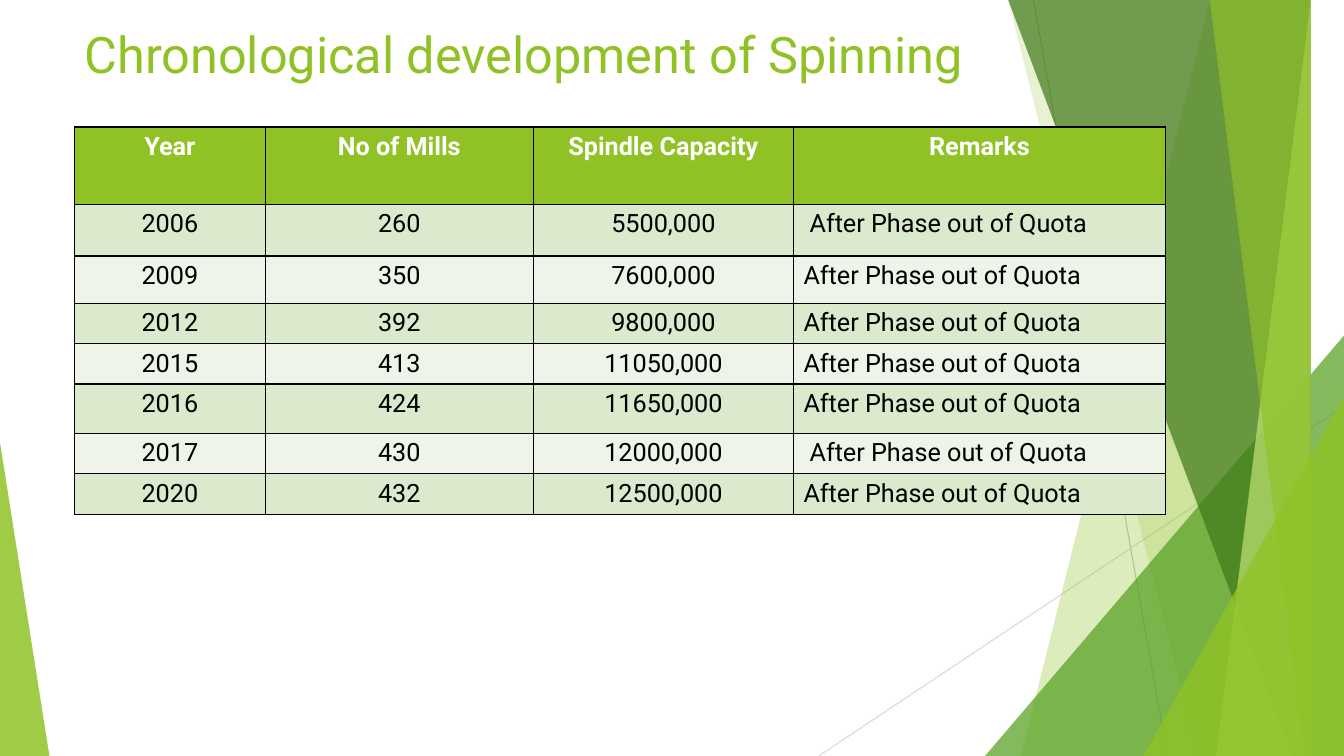
from dataclasses import dataclass

import pptx
import pptx.dml.color
import pptx.enum.shapes
import pptx.enum.text
import pptx.oxml
import pptx.oxml.ns
import pptx.util

Inches = pptx.util.Inches
Pt = pptx.util.Pt
ALIGN = pptx.enum.text.PP_ALIGN
WIDTH, HEIGHT = 13.33, 7.5
TOP = -0.01
FONT = "Roboto"
COLOURS = {
    "lime": "90C226", "green": "54A021", "forest": "3F7819", "pale": "C0E474",
    "grey": "BFBFBF", "silver": "D9D9D9", "white": "FFFFFF", "black": "000000",
    "odd": "DBE9CD", "even": "EEF4E8",
}


@dataclass
class Ray:
    start: tuple[float, float]
    end: tuple[float, float]
    colour: str


@dataclass
class Band:
    """A panel running from the slide's top to its bottom along the right edge."""
    top_left: float
    bottom_left: float
    colour: str
    opacity: int


@dataclass
class Wedge:
    """A triangle standing on the bottom edge, its apex at the given side."""
    left: float
    top: float
    width: float
    apex: float
    colour: str
    opacity: int


@dataclass
class Record:
    year: str
    mills: str
    capacity: str
    height: float
    indent: float = 0.1


RAYS = [
    Ray((10.25, 0), (11.58, HEIGHT), "grey"),
    Ray((WIDTH, 4.03), (8.12, HEIGHT), "silver"),
]
PANELS = [
    Band(12.28, 10.04, "lime", 30),
    Band(10.5, 11.83, "lime", 20),
    Wedge(9.77, 3.33, 3.56, 1, "green", 72),
    Band(10.21, 12.91, "forest", 70),
    Band(13.03, 11.92, "pale", 70),
    Band(11.96, 13.18, "lime", 65),
    Wedge(11.34, 3.93, 1.99, 1, "lime", 80),
    Wedge(0, 4.39, 0.49, 0, "lime", 85),
]
HEADINGS = ["Year", "No of Mills", "Spindle Capacity", "Remarks"]
COLUMN_WIDTHS = [1.89, 2.66, 2.58, 3.69]
HEADING_HEIGHT = 0.77
REMARK = "After Phase out of Quota"
RECORDS = [
    Record("2006", "260", "5500,000", 0.51, indent=0.16),
    Record("2009", "350", "7600,000", 0.47),
    Record("2012", "392", "9800,000", 0.4),
    Record("2015", "413", "11050,000", 0.4),
    Record("2016", "424", "11650,000", 0.49),
    Record("2017", "430", "12000,000", 0.39, indent=0.16),
    Record("2020", "432", "12500,000", 0.39),
]


def rgb(name: str) -> pptx.dml.color.RGBColor:
    return pptx.dml.color.RGBColor.from_string(COLOURS[name])


def write(para, text: str, colour: str, **formats) -> None:
    span = para.add_run()
    span.text = text
    for name, value in {"name": FONT, **formats}.items():
        setattr(span.font, name, value)
    span.font.color.rgb = rgb(colour)


def draw_ray(page, ray: Ray) -> None:
    ends = [Inches(value) for value in (*ray.start, *ray.end)]
    line = page.shapes.add_connector(pptx.enum.shapes.MSO_CONNECTOR.STRAIGHT, *ends)
    line.line.color.rgb = rgb(ray.colour)
    line.line.width = Pt(0.75)
    line.element.spPr.append(pptx.oxml.parse_xml(
        f'<a:effectLst {pptx.oxml.ns.nsdecls("a")}/>'))


def draw_panel(page, panel: Band | Wedge) -> None:
    if isinstance(panel, Band):
        builder = page.shapes.build_freeform(panel.top_left, TOP, scale=Inches(1))
        builder.add_line_segments(
            [(WIDTH, TOP), (WIDTH, HEIGHT), (panel.bottom_left, HEIGHT)])
        shape = builder.convert_to_shape()
    else:
        shape = page.shapes.add_shape(
            pptx.enum.shapes.MSO_SHAPE.ISOSCELES_TRIANGLE,
            Inches(panel.left), Inches(panel.top),
            Inches(panel.width), Inches(HEIGHT - panel.top))
        shape.adjustments[0] = panel.apex
    shape.shadow.inherit = False
    shape.line.fill.background()
    shape.fill.solid()
    shape.fill.fore_color.rgb = rgb(panel.colour)
    tint = shape.element.spPr.find(".//" + pptx.oxml.ns.qn("a:srgbClr"))
    tint.append(pptx.oxml.parse_xml(
        f'<a:alpha {pptx.oxml.ns.nsdecls("a")} val="{panel.opacity * 1000}"/>'))


def draw_title(page, text: str) -> None:
    box = page.shapes.add_textbox(Inches(0.74), Inches(0.14), Inches(9.4), Inches(0.86))
    box.text_frame.word_wrap = True
    box.text_frame.margin_top = Inches(0.09)
    write(box.text_frame.paragraphs[0], text, "lime", size=Pt(36))


def add_borders(cell) -> None:
    properties = cell._tc.get_or_add_tcPr()
    for position, side in enumerate(("lnL", "lnR", "lnT", "lnB")):
        properties.insert(position, pptx.oxml.parse_xml(
            f'<a:{side} {pptx.oxml.ns.nsdecls("a")} w="{Pt(1)}"><a:solidFill>'
            f'<a:srgbClr val="{COLOURS["black"]}"/></a:solidFill></a:{side}>'))


def fill_cell(cell, text: str, fill: str, colour: str, bold: bool, align) -> None:
    cell.fill.solid()
    cell.fill.fore_color.rgb = rgb(fill)
    para = cell.text_frame.paragraphs[0]
    para.alignment = align
    write(para, text, colour, size=Pt(18), bold=bold)
    add_borders(cell)


def draw_table(page) -> None:
    heights = [HEADING_HEIGHT] + [record.height for record in RECORDS]
    table = page.shapes.add_table(
        len(heights), len(HEADINGS), Inches(0.74), Inches(1.26),
        Inches(sum(COLUMN_WIDTHS)), Inches(sum(heights))).table
    table.horz_banding = False
    for column, width in zip(table.columns, COLUMN_WIDTHS):
        column.width = Inches(width)
    for row, height in zip(table.rows, heights):
        row.height = Inches(height)
    for column, heading in enumerate(HEADINGS):
        fill_cell(table.cell(0, column), heading, "lime", "white", True, ALIGN.CENTER)
    for row, record in enumerate(RECORDS, start=1):
        fill = "odd" if row % 2 else "even"
        for column, text in enumerate((record.year, record.mills, record.capacity)):
            fill_cell(table.cell(row, column), text, fill, "black", False, ALIGN.CENTER)
        remark = table.cell(row, len(HEADINGS) - 1)
        fill_cell(remark, REMARK, fill, "black", False, ALIGN.LEFT)
        remark.margin_left = Inches(record.indent)


def main() -> None:
    deck = pptx.Presentation()
    deck.slide_width, deck.slide_height = Inches(WIDTH), Inches(HEIGHT)
    page = deck.slides.add_slide(deck.slide_layouts[6])
    for ray in RAYS:
        draw_ray(page, ray)
    for panel in PANELS:
        draw_panel(page, panel)
    draw_title(page, "Chronological development of Spinning")
    draw_table(page)
    deck.save("out.pptx")


if __name__ == "__main__":
    main()
